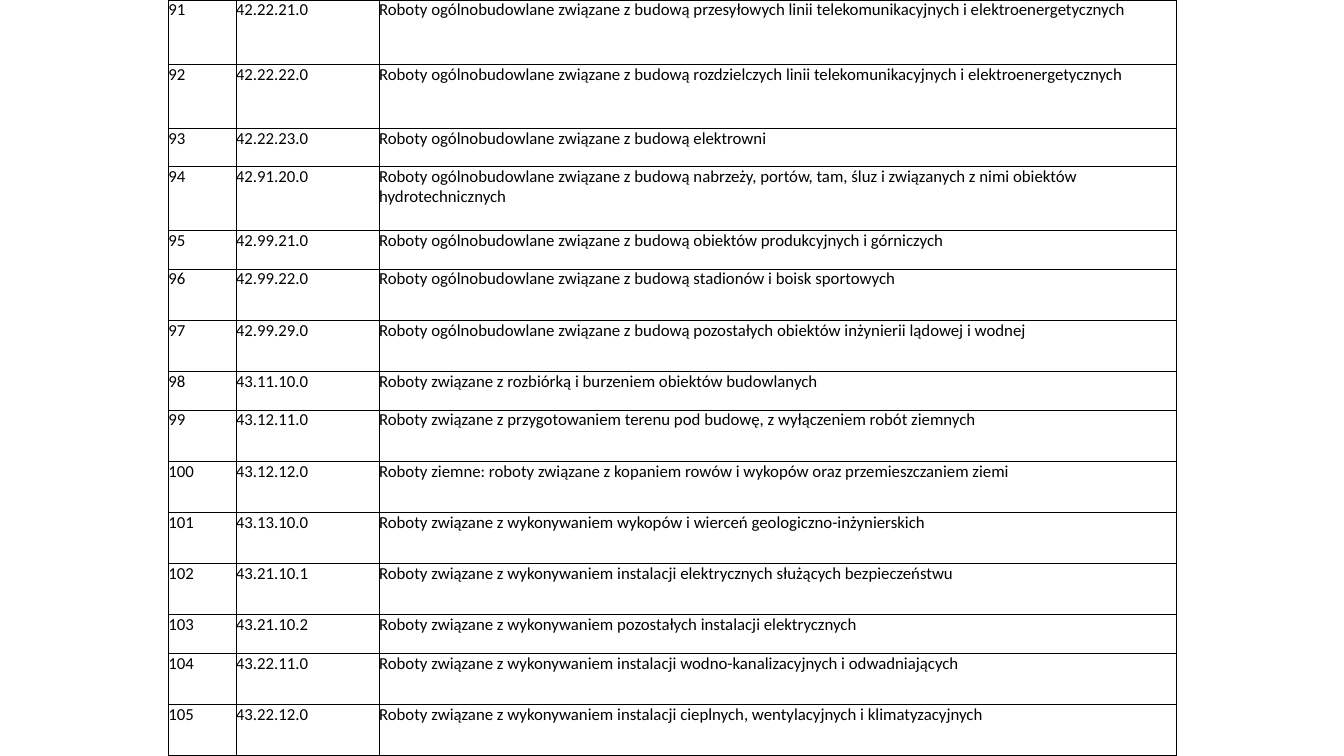
from dataclasses import dataclass

from lxml import etree
from pptx import Presentation
from pptx.dml.color import RGBColor
from pptx.enum.text import MSO_ANCHOR
from pptx.oxml.ns import qn
from pptx.util import Inches, Pt

TOP = MSO_ANCHOR.TOP


@dataclass(frozen=True)
class Theme:
    font: str = "Calibri"
    size: float = 12
    ink: str = "000000"
    paper: str = "FFFFFF"
    border: float = 0.6


FIRST_NUMBER = 91
TABLE_LEFT, TABLE_TOP, TABLE_HEIGHT = 1.67, 0, 7.5
COLUMN_WIDTHS = (0.67, 1.42, 7.91)

# Height share, classification code, description
WORKS = [
    (5, "42.22.21.0", "Roboty ogólnobudowlane związane z budową przesyłowych linii telekomunikacyjnych i elektroenergetycznych"),
    (5, "42.22.22.0", "Roboty ogólnobudowlane związane z budową rozdzielczych linii telekomunikacyjnych i elektroenergetycznych"),
    (3, "42.22.23.0", "Roboty ogólnobudowlane związane z budową elektrowni"),
    (5, "42.91.20.0", "Roboty ogólnobudowlane związane z budową nabrzeży, portów, tam, śluz i związanych z nimi obiektów hydrotechnicznych"),
    (3, "42.99.21.0", "Roboty ogólnobudowlane związane z budową obiektów produkcyjnych i górniczych"),
    (4, "42.99.22.0", "Roboty ogólnobudowlane związane z budową stadionów i boisk sportowych"),
    (4, "42.99.29.0", "Roboty ogólnobudowlane związane z budową pozostałych obiektów inżynierii lądowej i wodnej"),
    (3, "43.11.10.0", "Roboty związane z rozbiórką i burzeniem obiektów budowlanych"),
    (4, "43.12.11.0", "Roboty związane z przygotowaniem terenu pod budowę, z wyłączeniem robót ziemnych"),
    (4, "43.12.12.0", "Roboty ziemne: roboty związane z kopaniem rowów i wykopów oraz przemieszczaniem ziemi"),
    (4, "43.13.10.0", "Roboty związane z wykonywaniem wykopów i wierceń geologiczno-inżynierskich"),
    (4, "43.21.10.1", "Roboty związane z wykonywaniem instalacji elektrycznych służących bezpieczeństwu"),
    (3, "43.21.10.2", "Roboty związane z wykonywaniem pozostałych instalacji elektrycznych"),
    (4, "43.22.11.0", "Roboty związane z wykonywaniem instalacji wodno-kanalizacyjnych i odwadniających"),
    (4, "43.22.12.0", "Roboty związane z wykonywaniem instalacji cieplnych, wentylacyjnych i klimatyzacyjnych"),
]


def apply_format(target, values):
    for name, value in values.items():
        setattr(target, name, value)


class PageBuilder:
    def __init__(self, page, theme):
        self.page = page
        self.theme = theme

    def table(self, left, top, widths, heights, rows):
        frame = self.page.shapes.add_table(
            len(rows), len(widths), Inches(left), Inches(top),
            Inches(sum(widths)), Inches(sum(heights)))
        table = frame.table
        apply_format(table, {"first_row": False, "horz_banding": False})
        for column, width in zip(table.columns, widths):
            column.width = Inches(width)
        for row, height, texts in zip(table.rows, heights, rows):
            row.height = Inches(height)
            for cell, text in zip(row.cells, texts):
                self.cell(cell, text)

    def cell(self, cell, text):
        apply_format(cell, {
            "margin_left": 0, "margin_right": 0, "margin_top": 0,
            "margin_bottom": 0, "vertical_anchor": TOP})
        self.borders(cell)
        cell.fill.solid()
        cell.fill.fore_color.rgb = RGBColor.from_string(self.theme.paper)
        span = cell.text_frame.paragraphs[0].add_run()
        span.text = text
        apply_format(span.font, {
            "name": self.theme.font, "size": Pt(self.theme.size), "bold": False})
        span.font.color.rgb = RGBColor.from_string(self.theme.ink)

    def borders(self, cell):
        properties = cell._tc.get_or_add_tcPr()
        for side in ("a:lnL", "a:lnR", "a:lnT", "a:lnB"):
            line = etree.SubElement(
                properties, qn(side), w=str(Pt(self.theme.border)))
            fill = etree.SubElement(line, qn("a:solidFill"))
            etree.SubElement(fill, qn("a:srgbClr"), val=self.theme.ink)


def main():
    deck = Presentation()
    apply_format(deck, {"slide_width": Inches(13.33), "slide_height": Inches(7.5)})
    page = deck.slides.add_slide(deck.slide_layouts[6])
    builder = PageBuilder(page, Theme())

    # Numbered list of works, with row heights shared out over the page
    unit = TABLE_HEIGHT / sum(share for share, _, _ in WORKS)
    heights = [share * unit for share, _, _ in WORKS]
    rows = [(str(number), code, description)
            for number, (_, code, description) in enumerate(WORKS, FIRST_NUMBER)]
    builder.table(TABLE_LEFT, TABLE_TOP, COLUMN_WIDTHS, heights, rows)

    deck.save("out.pptx")


if __name__ == "__main__":
    main()
